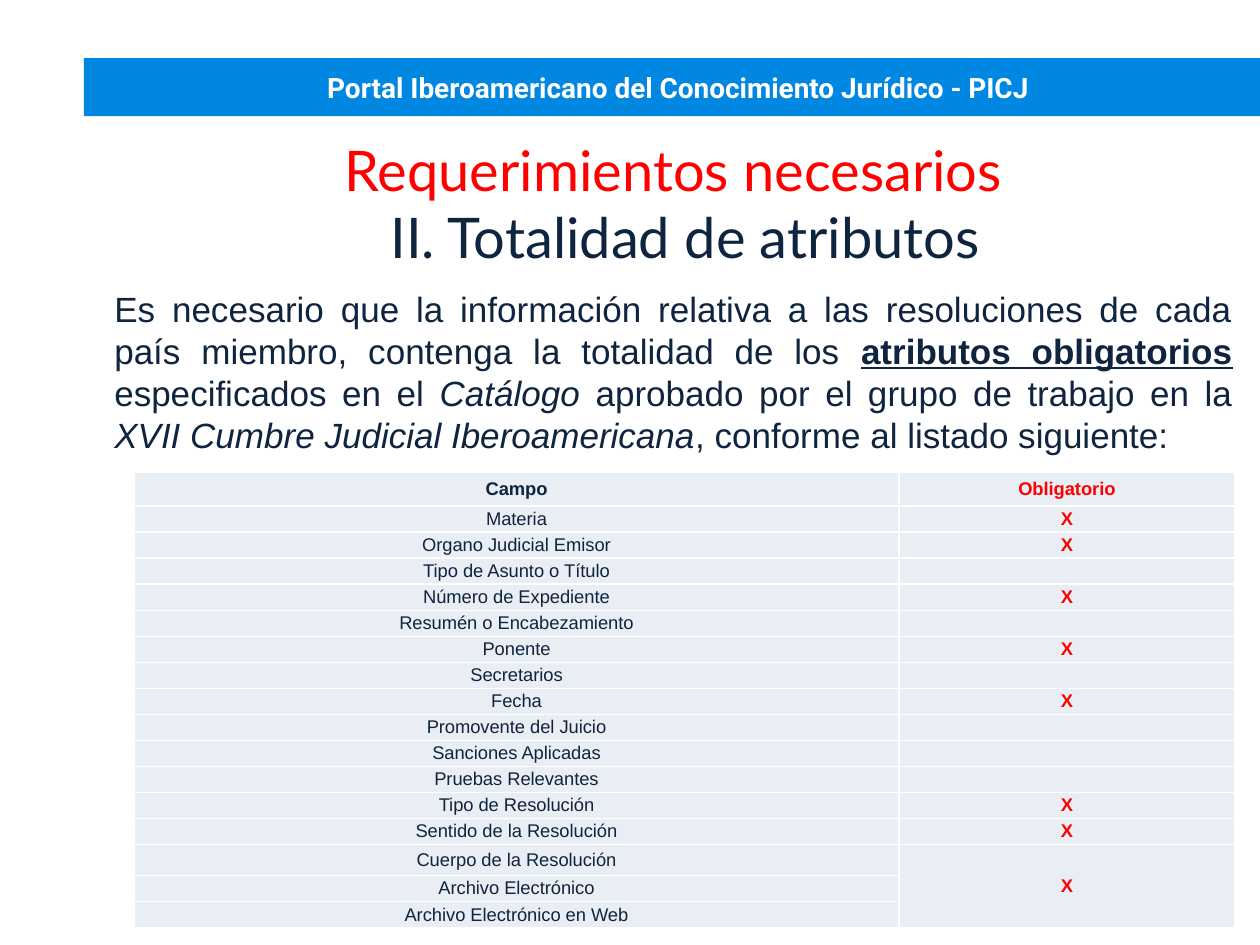
from pptx import Presentation
from pptx.dml.color import RGBColor
from pptx.enum.shapes import MSO_SHAPE
from pptx.enum.text import MSO_ANCHOR, PP_ALIGN
from pptx.oxml import parse_xml
from pptx.oxml.ns import nsdecls
from pptx.util import Pt

NAVY, RED, WHITE = "0F243E", "FF0000", "FFFFFF"


def color(code):
    return RGBColor.from_string(code)


def add_run(para, text, size, face, code, bold=False, italic=False, under=False):
    run = para.add_run()
    run.text = text
    font = run.font
    font.size, font.name, font.color.rgb = Pt(size), face, color(code)
    font.bold, font.italic, font.underline = bold, italic, under


deck = Presentation()
deck.slide_width, deck.slide_height = Pt(720), Pt(540)
slide = deck.slides.add_slide(deck.slide_layouts[6])
shapes = slide.shapes

# Blue title band
band = shapes.add_shape(MSO_SHAPE.RECTANGLE, Pt(48), Pt(33.2), Pt(672), Pt(33.2))
band.shadow.inherit = False
band.fill.solid()
band.fill.fore_color.rgb = color("0087E2")
band.line.fill.background()

# Heading and body text
box = shapes.add_textbox(Pt(65.3), Pt(77.4), Pt(641), Pt(442))

for shape in (band, box):
    frame = shape.text_frame
    frame.word_wrap = True
    frame.margin_left = frame.margin_right = Pt(0)
    frame.margin_top = frame.margin_bottom = Pt(0)
band.text_frame.vertical_anchor = MSO_ANCHOR.MIDDLE
box.text_frame.vertical_anchor = MSO_ANCHOR.TOP

para = band.text_frame.paragraphs[0]
para.alignment = PP_ALIGN.CENTER
para._p.get_or_add_pPr().set("marL", str(Pt(7)))
add_run(para, "Portal Iberoamericano del Conocimiento Jurídico - PICJ",
        16, "Roboto", WHITE, bold=True)

para = box.text_frame.paragraphs[0]
para.alignment = PP_ALIGN.CENTER
para._p.get_or_add_pPr().set("marR", str(Pt(2)))
add_run(para, "Requerimientos necesarios", 32, "Lato", RED)

para = box.text_frame.add_paragraph()
para.alignment = PP_ALIGN.CENTER
para._p.get_or_add_pPr().set("marL", str(Pt(13.7)))
add_run(para, "II. Totalidad de atributos", 32, "Lato", NAVY)

para = box.text_frame.add_paragraph()
para.alignment = PP_ALIGN.JUSTIFY
para.space_before = Pt(10)
para.line_spacing = Pt(24)
for text, style in (
    ("Es necesario que la información relativa a las resoluciones de cada país "
     "miembro, contenga la totalidad de los ", {}),
    ("atributos obligatorios ", {"bold": True, "under": True}),
    ("especificados en el ", {}),
    ("Catálogo ", {"italic": True}),
    ("aprobado por el grupo de trabajo en la ", {}),
    ("XVII Cumbre Judicial Iberoamericana", {"italic": True}),
    (", conforme al listado siguiente:", {}),
):
    add_run(para, text, 20, "Arial", NAVY, **style)

# Table of fields, with a mark on each required one
rows = [
    ("Campo", "Obligatorio"),
    ("Materia", "X"),
    ("Organo Judicial Emisor", "X"),
    ("Tipo de Asunto o Título", ""),
    ("Número de Expediente", "X"),
    ("Resumén o Encabezamiento", ""),
    ("Ponente", "X"),
    ("Secretarios", ""),
    ("Fecha", "X"),
    ("Promovente del Juicio", ""),
    ("Sanciones Aplicadas", ""),
    ("Pruebas Relevantes", ""),
    ("Tipo de Resolución", "X"),
    ("Sentido de la Resolución", "X"),
    ("Cuerpo de la Resolución", "X"),
    ("Archivo Electrónico", ""),
    ("Archivo Electrónico en Web", ""),
]
table = shapes.add_table(len(rows), 2, Pt(76.7), Pt(270), Pt(629), Pt(260.4)).table
table.first_row = table.horz_banding = False
table.columns[0].width, table.columns[1].width = Pt(437), Pt(192)
tall = {0: 19.2, 14: 17.7}

for i, texts in enumerate(rows):
    table.rows[i].height = Pt(tall.get(i, 14.9))
    for j, text in enumerate(texts):
        cell = table.cell(i, j)
        cell.margin_left = cell.margin_right = Pt(0)
        cell.margin_top = cell.margin_bottom = Pt(0)
        cell.vertical_anchor = MSO_ANCHOR.MIDDLE
        # White borders come before the fill
        for side in ("lnL", "lnR", "lnT", "lnB"):
            cell._tc.get_or_add_tcPr().append(parse_xml(
                f'<a:{side} {nsdecls("a")} w="{Pt(1)}"><a:solidFill>'
                f'<a:srgbClr val="{WHITE}"/></a:solidFill></a:{side}>'))
        cell.fill.solid()
        cell.fill.fore_color.rgb = color("E9EDF4")
        para = cell.text_frame.paragraphs[0]
        para.alignment = PP_ALIGN.CENTER
        if text:
            add_run(para, text, 10.5, "Arial", RED if j else NAVY,
                    bold=i == 0 or j == 1)
        else:
            # Small end mark keeps empty cells from growing the row
            para._p.append(parse_xml(f'<a:endParaRPr {nsdecls("a")} sz="1050"/>'))

# One mark covers the last three fields
table.cell(14, 1).merge(table.cell(16, 1))

deck.save("out.pptx")
